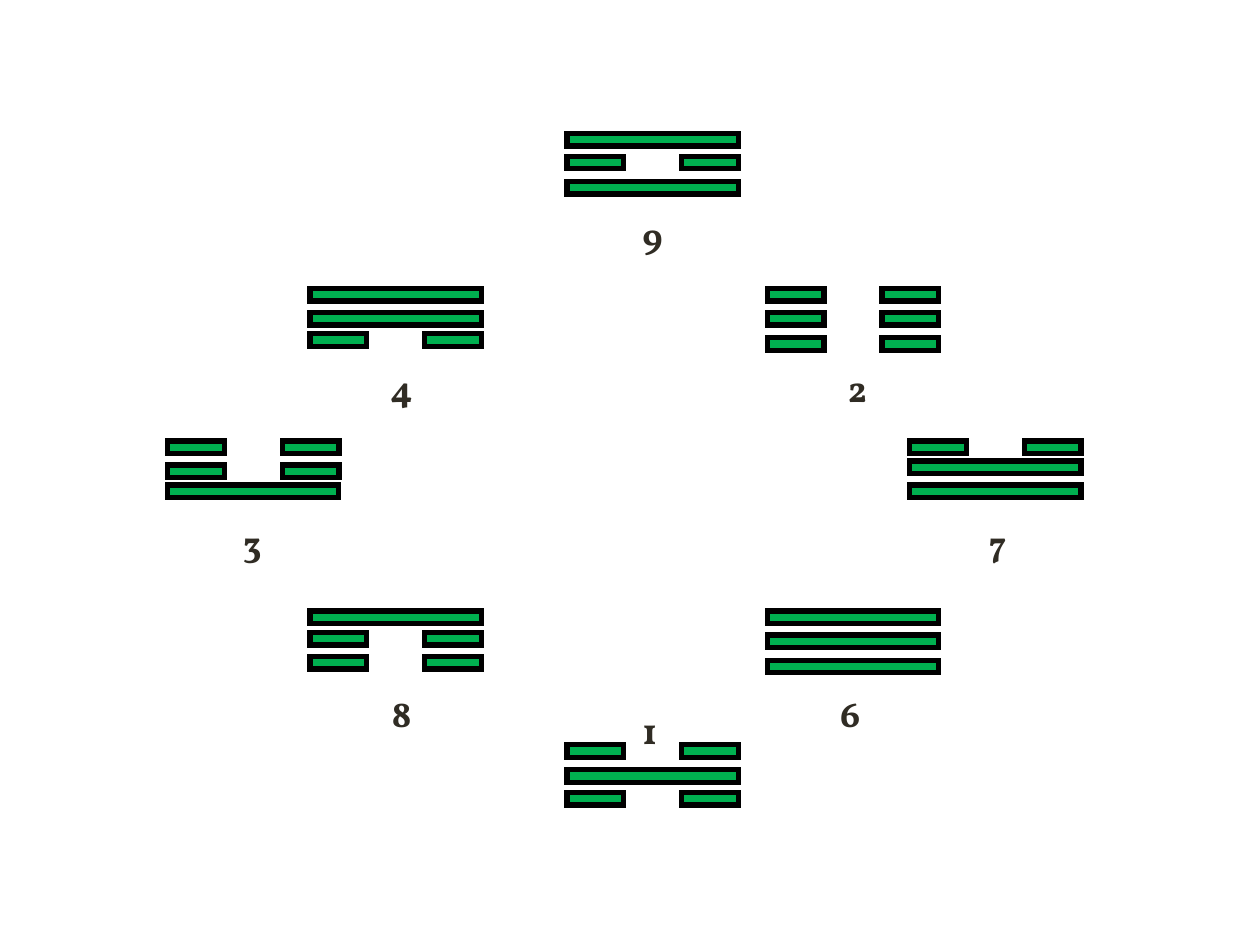
from lxml import etree
from pptx import Presentation
from pptx.dml.color import RGBColor
from pptx.enum.shapes import MSO_SHAPE
from pptx.enum.text import MSO_AUTO_SIZE
from pptx.oxml.ns import qn
from pptx.util import Inches, Pt

RECT = MSO_SHAPE.RECTANGLE
GROW = MSO_AUTO_SIZE.SHAPE_TO_FIT_TEXT
GREEN = RGBColor(0x00, 0xB0, 0x50)
BLACK = RGBColor(0x00, 0x00, 0x00)
INK = RGBColor(0x30, 0x2C, 0x24)

BAR_H = 0.1
FULL_W = 1.36
HALF_W = 0.45
HALF_STEP = 0.91

# number, number position, left edge, rows from the top: (top, is solid)
TRIGRAMS = [
    ("6", (6.57, 5.43), 6.09, [(4.85, True), (5.04, True), (5.24, True)]),
    ("2", (6.63, 2.85), 6.09, [(2.29, False), (2.48, False), (2.68, False)]),
    ("8", (3.01, 5.43), 2.46, [(4.85, True), (5.02, False), (5.21, False)]),
    ("7", (7.75, 4.08), 7.22, [(3.5, False), (3.66, True), (3.85, True)]),
    ("3", (1.83, 4.08), 1.33, [(3.5, False), (3.69, False), (3.85, True)]),
    ("4", (3, 2.85), 2.46, [(2.29, True), (2.48, True), (2.65, False)]),
    ("9", (5, 1.64), 4.5, [(1.06, True), (1.24, False), (1.44, True)]),
    ("1", (5, 5.57), 4.5, [(5.91, False), (6.11, True), (6.29, False)]),
]


def add_bar(shapes, left, top, width):
    bar = shapes.add_shape(RECT, Inches(left), Inches(top), Inches(width), Inches(BAR_H))
    bar.shadow.inherit = False
    bar.fill.solid()
    bar.fill.fore_color.rgb = GREEN
    bar.line.color.rgb = BLACK
    bar.line.width = Pt(3)
    ln = bar.element.spPr.find(qn("a:ln"))
    etree.SubElement(ln, qn("a:miter"), lim="800000")


prs = Presentation()
prs.slide_width = Inches(10)
prs.slide_height = Inches(7.5)
s = prs.slides.add_slide(prs.slide_layouts[6])
shapes = s.shapes.add_group_shape().shapes

for number, (x, y), left, rows in TRIGRAMS:
    for top, solid in rows:
        if solid:
            add_bar(shapes, left, top, FULL_W)
        else:
            add_bar(shapes, left, top, HALF_W)
            add_bar(shapes, left + HALF_STEP, top, HALF_W)

    tf = shapes.add_textbox(Inches(x), Inches(y), Inches(0.35), Inches(0.45)).text_frame
    tf.word_wrap = False
    tf.auto_size = GROW
    tf.text = number
    r = tf.paragraphs[0].runs[0]
    r.font.name = "Vollkorn"
    r.font.size = Pt(21)
    r.font.bold = True
    r.font.color.rgb = INK

prs.save("out.pptx")
